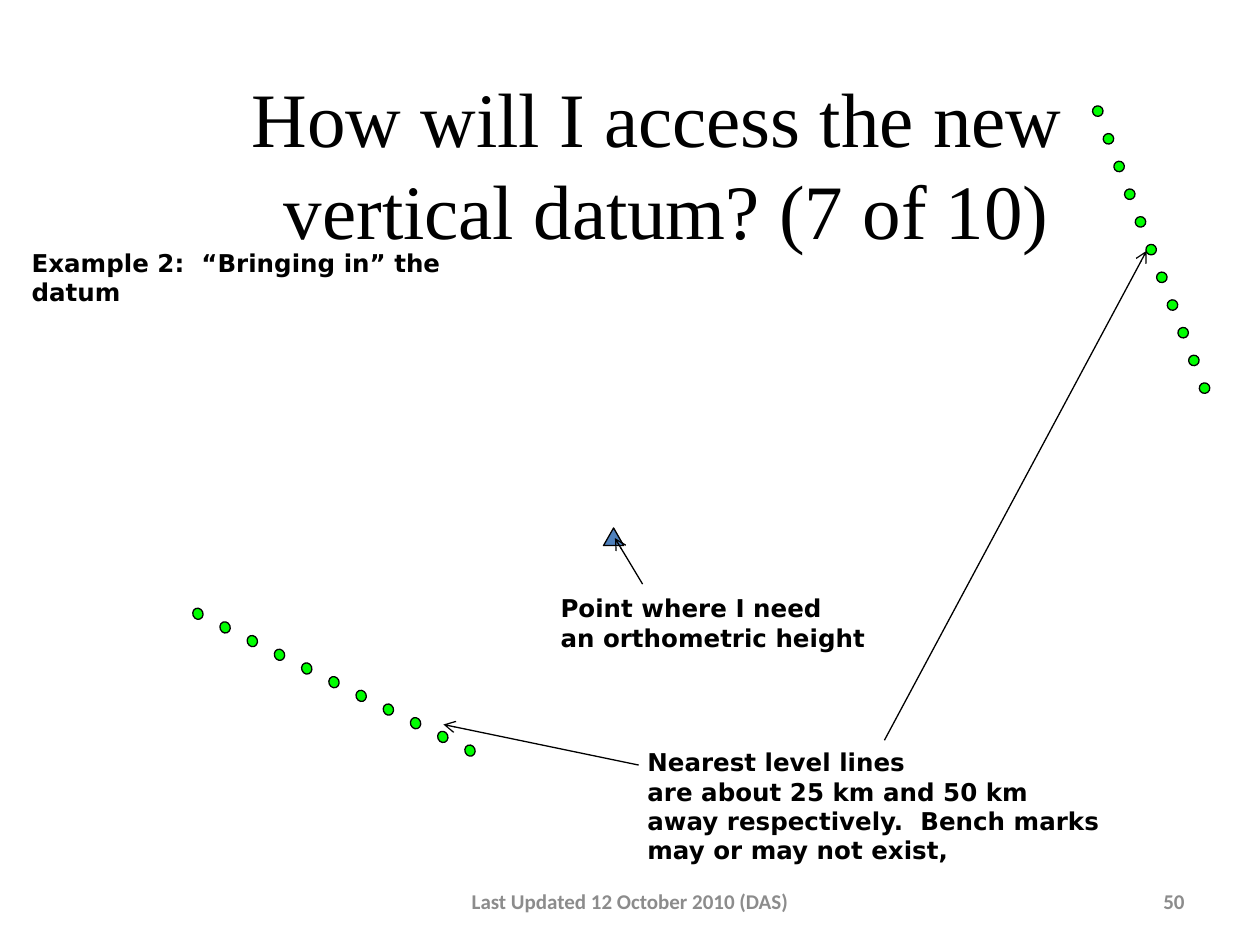
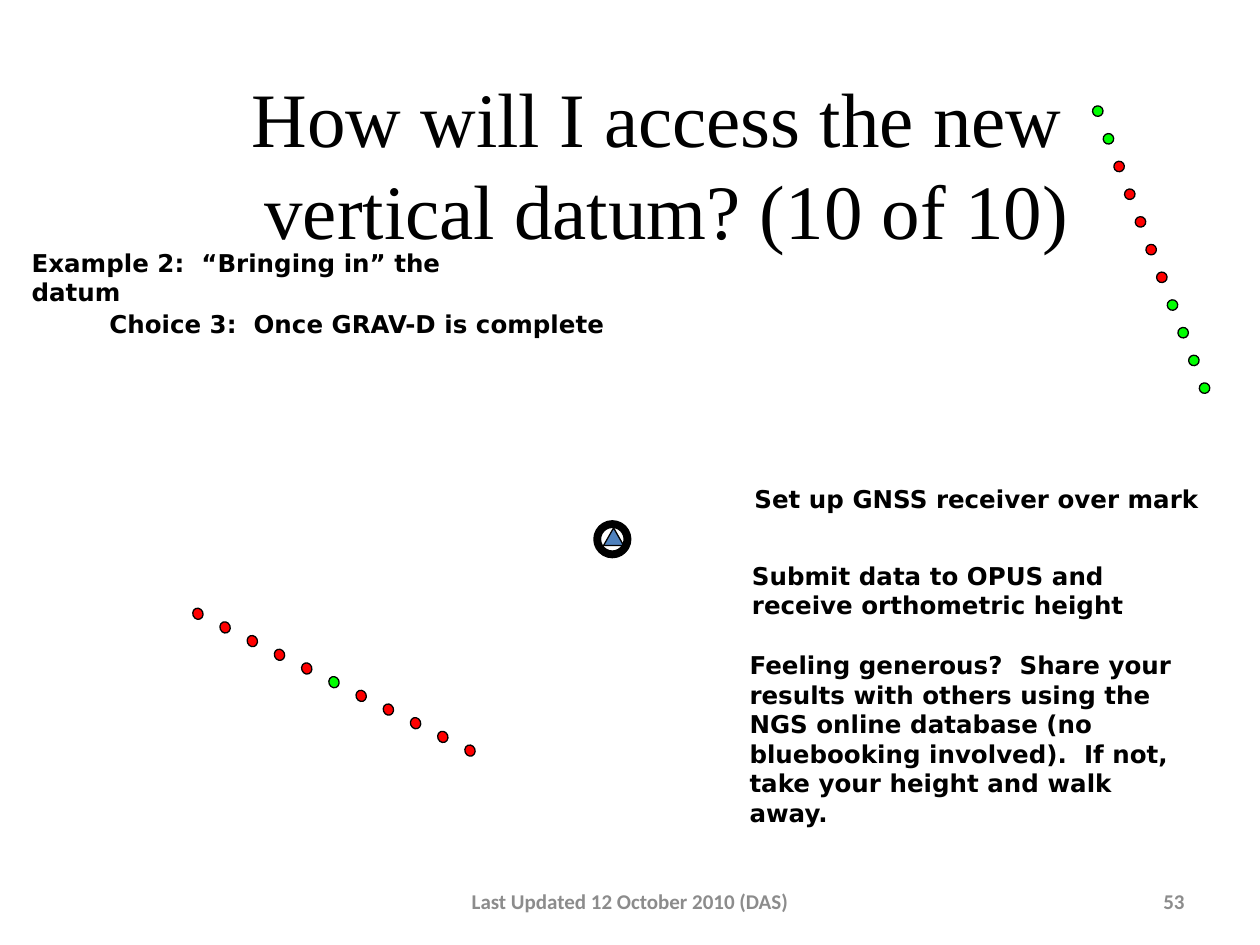
"""Build two slides on reaching the new vertical datum from nearby level lines."""
import lxml.etree
import pptx
import pptx.dml.color
import pptx.enum.shapes
import pptx.enum.text
import pptx.oxml.ns
import pptx.util

Pt = pptx.util.Pt
RGB = pptx.dml.color.RGBColor
SHAPE = pptx.enum.shapes.MSO_SHAPE
ALIGN = pptx.enum.text.PP_ALIGN
ANCHOR = pptx.enum.text.MSO_ANCHOR

BLACK = RGB(0x00, 0x00, 0x00)
GREY = RGB(0x8C, 0x8C, 0x8C)
BLUE = RGB(0x4F, 0x81, 0xBD)
GREEN = RGB(0x00, 0xFF, 0x00)
RED = RGB(0xFF, 0x00, 0x00)
MARK_COLOURS = {"G": GREEN, "R": RED}

EXAMPLE = (11, 138.2, 302, ["Example 2:  “Bringing in” the datum"])
FOOTER = "Last Updated 12 October 2010 (DAS)"
STATION = (344.9, 301.7, 11.5, 10.1)
STATION_RING = (341.3, 299.5, 17.3, 17.3)

EAST_LINE = {"start": (624.3, 60.5), "step": (6.1, 15.83), "size": (6, 6), "turn": 23.9}
WEST_LINE = {"start": (110.2, 347.5), "step": (15.55, 7.82), "size": (5.8, 6.5), "turn": 338.5}

SLIDES = [
    {
        "part": 7,
        "number": "50",
        "east": "GGGGGGGGGGG",
        "west": "GGGGGGGGGGG",
        "ring": False,
        "notes": [
            (313.2, 335.5, 195, ["Point where I need", "an orthometric height"]),
            (362.9, 423.4, 285, ["Nearest level lines", "are about 25 km and 50 km",
                                 "away respectively.  Bench marks", "may or may not exist,"]),
        ],
        "arrows": [
            ((367.2, 333.8), (351.4, 307.5)),
            ((365.0, 437.2), (253.4, 414.0)),
            ((505.4, 423.0), (655.2, 143.3)),
        ],
    },
    {
        "part": 10,
        "number": "53",
        "east": "GGRRRRRGGGG",
        "west": "RRRRRGRRRRR",
        "ring": True,
        "notes": [
            (55.4, 173.2, 310, ["Choice 3:  Once GRAV-D is complete"]),
            (424, 273.2, 280, ["Set up GNSS receiver over mark"]),
            (422.6, 316.8, 240, ["Submit data to OPUS and", "receive orthometric height"]),
            (421.2, 368.2, 265, ["Feeling generous?  Share your", "results with others using the",
                                 "NGS online database (no", "bluebooking involved).  If not,",
                                 "take your height and walk", "away."]),
        ],
        "arrows": [],
    },
]


def add_text(slide, left, top, width, height, lines, font="DejaVu Sans", size=14,
             bold=True, colour=BLACK, align=ALIGN.LEFT, anchor=ANCHOR.TOP):
    frame = slide.shapes.add_textbox(Pt(left), Pt(top), Pt(width), Pt(height)).text_frame
    frame.word_wrap = True
    frame.vertical_anchor = anchor
    frame.text = "\n".join(lines)
    for paragraph in frame.paragraphs:
        paragraph.alignment = align
        paragraph.font.name = font
        paragraph.font.size = Pt(size)
        paragraph.font.bold = bold
        paragraph.font.color.rgb = colour


def add_note(slide, left, top, width, lines):
    add_text(slide, left, top, width, 7.2 + 17 * len(lines), lines)


def add_symbol(slide, kind, box, fill, weight=0.75):
    symbol = slide.shapes.add_shape(kind, *map(Pt, box))
    symbol.shadow.inherit = False
    if fill is None:
        symbol.fill.background()
    else:
        symbol.fill.solid()
        symbol.fill.fore_color.rgb = fill
    symbol.line.color.rgb = BLACK
    symbol.line.width = Pt(weight)
    return symbol


def add_level_line(slide, level_line, marks):
    (left, top), (across, down) = level_line["start"], level_line["step"]
    for index, mark in enumerate(marks):
        box = (left + index * across, top + index * down, *level_line["size"])
        bench_mark = add_symbol(slide, SHAPE.OVAL, box, MARK_COLOURS[mark])
        bench_mark.rotation = level_line["turn"]


def add_arrow(slide, start, end):
    qn = pptx.oxml.ns.qn
    arrow = slide.shapes.add_connector(
        pptx.enum.shapes.MSO_CONNECTOR.STRAIGHT, *map(Pt, start + end))
    arrow.line.color.rgb = BLACK
    arrow.line.width = Pt(0.75)
    properties = arrow._element.spPr
    lxml.etree.SubElement(properties.find(qn("a:ln")), qn("a:tailEnd"), type="arrow")
    lxml.etree.SubElement(properties, qn("a:effectLst"))


def add_frame(slide, part, number):
    title = ["How will I access the new ", f"vertical datum? ({part} of 10)"]
    add_text(slide, 48, 48, 666, 90, title, "Times New Roman", 44, False,
             align=ALIGN.CENTER, anchor=ANCHOR.MIDDLE)
    for left, width, text, align in [(246, 228, FOOTER, ALIGN.CENTER),
                                     (516, 168, number, ALIGN.RIGHT)]:
        add_text(slide, left, 500.5, width, 28.75, [text], "Calibri", 12, True,
                 GREY, align, ANCHOR.MIDDLE)


def main():
    deck = pptx.Presentation()
    deck.slide_width, deck.slide_height = Pt(720), Pt(540)
    for content in SLIDES:
        slide = deck.slides.add_slide(deck.slide_layouts[6])
        add_level_line(slide, EAST_LINE, content["east"])
        add_level_line(slide, WEST_LINE, content["west"])
        add_symbol(slide, SHAPE.ISOSCELES_TRIANGLE, STATION, BLUE)
        if content["ring"]:
            add_symbol(slide, SHAPE.OVAL, STATION_RING, None, 4.5)
        for note in [EXAMPLE, *content["notes"]]:
            add_note(slide, *note)
        for start, end in content["arrows"]:
            add_arrow(slide, start, end)
        add_frame(slide, content["part"], content["number"])
    deck.save("out.pptx")


if __name__ == "__main__":
    main()
